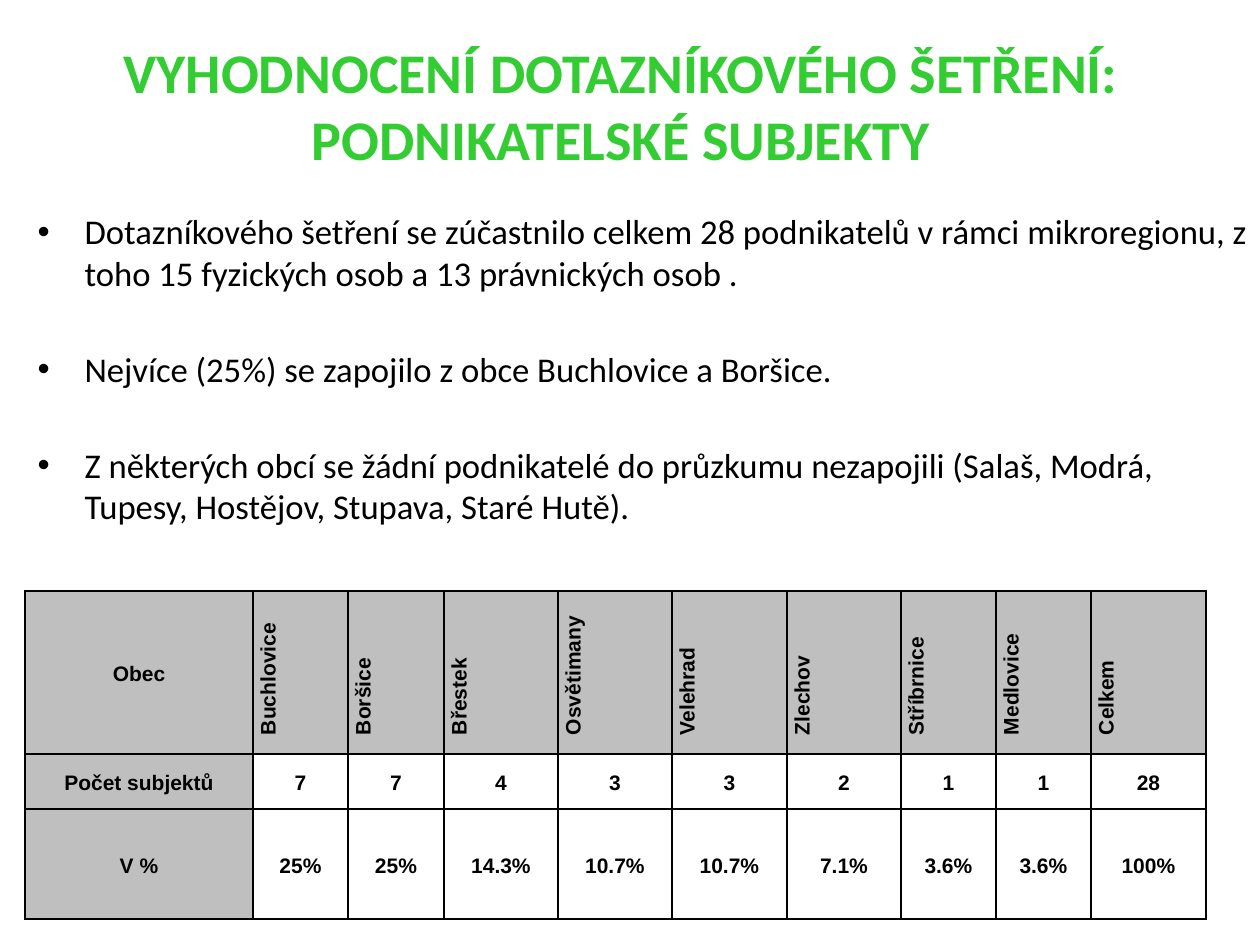
import dataclasses
import itertools

import pptx
import pptx.dml.color
import pptx.enum.text
import pptx.util
from lxml import etree
from pptx.oxml.ns import qn

SCALE = 914400 / 126  # EMU in one px
HUES = {"title": "33CC33", "text": "000000", "head": "BFBFBF", "line": "000000"}
ALIGN = pptx.enum.text.PP_ALIGN
MIDDLE = pptx.enum.text.MSO_ANCHOR.MIDDLE


@dataclasses.dataclass
class Box:
    left: int
    top: int
    width: int
    height: int


@dataclasses.dataclass
class Face:
    name: str
    size: float
    hue: str
    bold: bool = False


@dataclasses.dataclass
class Town:
    name: str
    count: str
    share: str


TITLE = ["VYHODNOCENÍ DOTAZNÍKOVÉHO ŠETŘENÍ:", "PODNIKATELSKÉ SUBJEKTY"]
POINTS = [
    "Dotazníkového šetření se zúčastnilo celkem 28 podnikatelů v rámci "
    "mikroregionu, z toho 15 fyzických osob a 13 právnických osob .",
    "Nejvíce (25%) se zapojilo z obce Buchlovice a Boršice.",
    "Z některých obcí se žádní podnikatelé do průzkumu nezapojili "
    "(Salaš, Modrá, Tupesy, Hostějov, Stupava, Staré Hutě).",
]
TOWNS = [
    Town("Obec", "Počet subjektů", "V %"),
    Town("Buchlovice", "7", "25%"),
    Town("Boršice", "7", "25%"),
    Town("Břestek", "4", "14.3%"),
    Town("Osvětimany", "3", "10.7%"),
    Town("Velehrad", "3", "10.7%"),
    Town("Zlechov", "2", "7.1%"),
    Town("Stříbrnice", "1", "3.6%"),
    Town("Medlovice", "1", "3.6%"),
    Town("Celkem", "28", "100%"),
]
EDGES = [25, 253, 348, 444, 558, 672, 787, 901, 996, 1091, 1206]
ROWS = [163, 55, 110]

BIG = Face("Calibri", 32, "title", True)
PLAIN = Face("Calibri", 19.8, "text")
SMALL = Face("Arial", 12, "text", True)


def px(size: float) -> pptx.util.Emu:
    return pptx.util.Emu(round(size * SCALE))


def color(hue: str) -> pptx.dml.color.RGBColor:
    return pptx.dml.color.RGBColor.from_string(HUES[hue])


def place(shape, box: Box) -> None:
    shape.left, shape.top = px(box.left), px(box.top)
    shape.width, shape.height = px(box.width), px(box.height)
    shape.text_frame.word_wrap = True
    shape.text_frame.auto_size = pptx.enum.text.MSO_AUTO_SIZE.NONE


def add_run(para, text: str, face: Face) -> None:
    run = para.add_run()
    run.text = text
    run.font.name = face.name
    run.font.size = pptx.util.Pt(face.size)
    run.font.bold = face.bold
    run.font.color.rgb = color(face.hue)


def indent(para, left: int, first: int) -> None:
    props = para._p.get_or_add_pPr()
    props.set("marL", str(px(left)))
    props.set("indent", str(px(first)))


def draw_title(shape, lines: list[str]) -> None:
    place(shape, Box(54, 26, 1134, 158))
    shape.text_frame.vertical_anchor = MIDDLE
    para = shape.text_frame.paragraphs[0]
    para.alignment = ALIGN.CENTER
    for i, line in enumerate(lines):
        if i:
            para.add_line_break()
        add_run(para, line, BIG)


def draw_list(shape, points: list[str]) -> None:
    place(shape, Box(25, 204, 1235, 397))
    frame = shape.text_frame
    for i, point in enumerate(points):
        para = frame.add_paragraph() if i else frame.paragraphs[0]
        para.space_before = pptx.util.Pt(31 if i else 4)
        indent(para, 47, -47)
        props = para._p.get_or_add_pPr()
        etree.SubElement(props, qn("a:buFont")).set("typeface", "Arial")
        etree.SubElement(props, qn("a:buChar")).set("char", "•")
        add_run(para, point, PLAIN)


def add_lines(cell) -> None:
    props = cell._tc.get_or_add_tcPr()
    for i, side in enumerate(["lnL", "lnR", "lnT", "lnB"]):
        line = etree.Element(qn("a:" + side), w=str(pptx.util.Pt(1)))
        fill = etree.SubElement(line, qn("a:solidFill"))
        etree.SubElement(fill, qn("a:srgbClr")).set("val", HUES["line"])
        props.insert(i, line)


def draw_cell(cell, text: str, gray: bool, turned: bool) -> None:
    cell.margin_left = cell.margin_right = px(9)
    cell.margin_top = cell.margin_bottom = 0
    cell.vertical_anchor = MIDDLE
    if gray:
        cell.fill.solid()
        cell.fill.fore_color.rgb = color("head")
    else:
        cell.fill.background()
    add_lines(cell)
    para = cell.text_frame.paragraphs[0]
    para.line_spacing = 1.15
    para.space_after = pptx.util.Pt(10)
    if turned:
        cell._tc.get_or_add_tcPr().set("vert", "vert270")
        indent(para, 10, 0)
    else:
        para.alignment = ALIGN.CENTER
    add_run(para, text, SMALL)


def draw_table(slide, towns: list[Town]) -> None:
    frame = slide.shapes.add_table(
        len(ROWS), len(towns), px(EDGES[0]), px(591),
        px(EDGES[-1] - EDGES[0]), px(sum(ROWS)))
    table = frame.table
    table.first_row = table.horz_banding = False
    for col, (left, right) in zip(table.columns, itertools.pairwise(EDGES)):
        col.width = px(right - left)
    for row, height in zip(table.rows, ROWS):
        row.height = px(height)
    for c, town in enumerate(towns):
        for r, text in enumerate(dataclasses.astuple(town)):
            draw_cell(table.cell(r, c), text, r == 0 or c == 0, r == 0 and c > 0)


def main() -> None:
    deck = pptx.Presentation()
    deck.slide_width, deck.slide_height = px(1260), px(945)
    slide = deck.slides.add_slide(deck.slide_layouts[1])
    # Heading and bullet points
    draw_title(slide.shapes.title, TITLE)
    draw_list(slide.placeholders[1], POINTS)
    # Firms by town
    draw_table(slide, TOWNS)
    deck.save("out.pptx")


if __name__ == "__main__":
    main()
